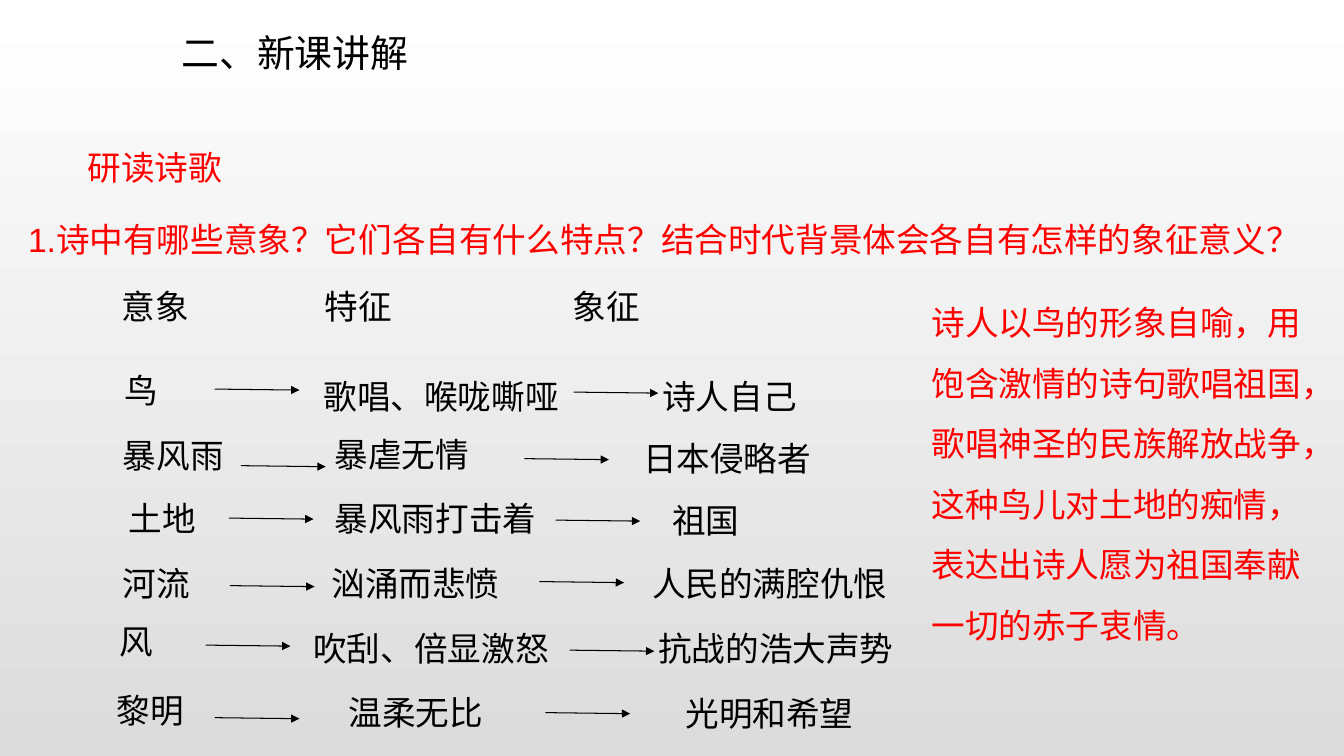
from lxml.etree import SubElement as Sub
from pptx import Presentation
from pptx.dml.color import RGBColor
from pptx.enum.shapes import MSO_CONNECTOR as Link
from pptx.enum.text import MSO_ANCHOR as Anchor, MSO_AUTO_SIZE as Fit, PP_ALIGN as Align
from pptx.oxml.ns import qn
from pptx.util import Inches, Pt

SANS = "Noto Sans CJK SC"
BLACK = "000000"
RED = "FF0000"
WIDTHS = (1.5, 3.31, 3.2)
HEADS = (("意象", 0), ("特征", 2.01), ("象征", 4.47))
ROWS = (
    ((("鸟", 0.03, 0.83), ("歌唱、喉咙嘶哑", 2, 0.89), ("诗人自己", 5.36, 0.89)),
     ((1.02, 1.07), (4.58, 1.1))),
    ((("暴风雨", 0.01, 1.48), ("暴虐无情", 2.11, 1.47), ("日本侵略者", 5.17, 1.51)),
     ((1.28, 1.83), (4.09, 1.76))),
    ((("土地", 0.07, 2.1), ("暴风雨打击着", 2.11, 2.1), ("祖国", 5.46, 2.12)),
     ((1.16, 2.35), (4.4, 2.37))),
    ((("河流", 0.01, 2.75), ("汹涌而悲愤", 2.08, 2.75), ("人民的满腔仇恨", 5.26, 2.75)),
     ((1.17, 3.02), (4.24, 2.98))),
    ((("风", -0.02, 3.32), ("吹刮、倍显激怒", 1.9, 3.39), ("抗战的浩大声势", 5.32, 3.39)),
     ((0.93, 3.61), (4.54, 3.66))),
    ((("黎明", -0.05, 4.01), ("温柔无比", 2.25, 4.03), ("光明和希望", 5.59, 4.04)),
     ((1.02, 4.33), (4.3, 4.28))),
)


def color(code):
    return RGBColor.from_string(code)


def style(par, size, face, code, lead):
    par.font.size = Pt(size)
    par.font.name = face
    par.font.color.rgb = color(code)
    par.line_spacing = lead


def write(slide, words, left, top, width, high=0.5, face=SANS, code=BLACK, lead=1.0):
    box = slide.shapes.add_textbox(Inches(left), Inches(top), Inches(width), Inches(high))
    frame = box.text_frame
    frame.word_wrap = True
    frame.auto_size = Fit.SHAPE_TO_FIT_TEXT
    frame.text = words
    style(frame.paragraphs[0], 24, face, code, lead)


def arrow(slide, left, top):
    line = slide.shapes.add_connector(
        Link.STRAIGHT, Inches(left), Inches(top), Inches(left + 0.84), Inches(top + 0.01))
    line.line.color.rgb = color(BLACK)
    line.line.width = Pt(0.75)
    Sub(line.line._get_or_add_ln(), qn("a:tailEnd"), type="triangle")
    Sub(line._element.spPr, qn("a:effectLst"))


def back(slide):
    fill = slide.background.fill
    fill.gradient()
    fill.gradient_angle = 270
    for stop, code, place in zip(fill.gradient_stops, ("FFFFFF", "DCDCDC"), (0, 1)):
        stop.color.rgb = color(code)
        stop.position = place


def title(slide, left, top, width, high):
    head = slide.shapes.title
    head.left, head.top = Inches(left), Inches(top)
    head.width, head.height = Inches(width), Inches(high)
    frame = head.text_frame
    frame.text = "二、新课讲解"
    frame.vertical_anchor = Anchor.MIDDLE
    par = frame.paragraphs[0]
    par.alignment = Align.LEFT
    style(par, 27, SANS, BLACK, 0.9)


def task(slide, left, top, width):
    write(slide, "研读诗歌", left + 0.59, top, 3.87, face="Arial", code=RED)
    write(slide, "1.诗中有哪些意象？它们各自有什么特点？结合时代背景体会各自有怎样的象征意义？",
          left, top + 0.51, width, 0.8, "Arial", RED, 1.5)


def chain(slide, left, top):
    for words, x in HEADS:
        write(slide, words, left + x, top, 1.5)
    for cells, lines in ROWS:
        for (words, x, y), width in zip(cells, WIDTHS):
            write(slide, words, left + x, top + y, width)
        for x, y in lines:
            arrow(slide, left + x, top + y)


def theme(slide, left, top, width, high):
    write(slide, "诗人以鸟的形象自喻，用饱含激情的诗句歌唱祖国，歌唱神圣的民族解放战争，"
          "这种鸟儿对土地的痴情，表达出诗人愿为祖国奉献一切的赤子衷情。",
          left, top, width, high, "Arial", RED, 1.5)


def main():
    deck = Presentation()
    deck.slide_width = Inches(13.33)
    deck.slide_height = Inches(7.5)
    slide = deck.slides.add_slide(deck.slide_layouts[5])
    back(slide)
    title(slide, 1.7, 0.28, 2.8, 0.54)
    task(slide, 0.18, 1.41, 13.15)
    chain(slide, 1.11, 2.79)
    theme(slide, 9.14, 2.75, 3.96, 4.75)
    deck.save("out.pptx")


if __name__ == "__main__":
    main()
